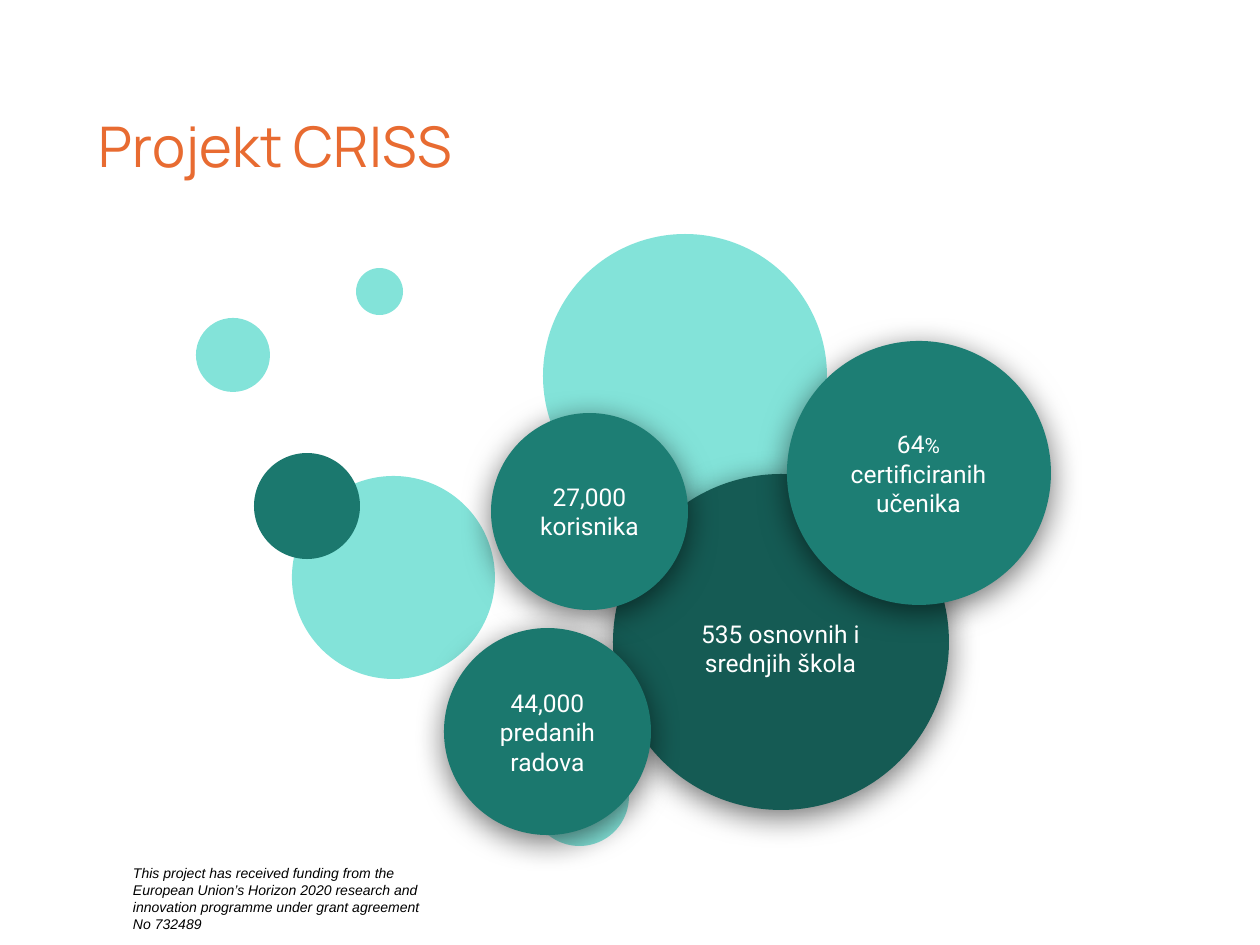
from lxml import etree
from pptx import Presentation
from pptx.dml.color import RGBColor
from pptx.enum.shapes import MSO_SHAPE as Shape
from pptx.enum.text import MSO_ANCHOR as Anchor, PP_ALIGN as Align
from pptx.oxml.ns import qn
from pptx.util import Emu, Pt

PX = 914400 / 126
MINT, TEAL, GREEN, DARK = "83E3D9", "1B786E", "1D7E74", "155B54"
WHITE, BLACK, ORANGE = "FFFFFF", "000000", "E86B31"


def add_circle(left, top, size, color, shadow=False):
    left, top, size = (Emu(round(n * PX)) for n in (left, top, size))
    circle = page.shapes.add_shape(Shape.OVAL, left, top, size, size)
    circle.fill.solid()
    circle.fill.fore_color.rgb = RGBColor.from_string(color)
    circle.line.fill.background()
    circle.shadow.inherit = False
    if shadow:
        effects = circle._element.spPr.find(qn("a:effectLst"))
        outer = etree.SubElement(effects, qn("a:outerShdw"), blurRad=str(Pt(18)),
                                 dist=str(Pt(4)), dir="5400000", algn="ctr", rotWithShape="0")
        tint = etree.SubElement(outer, qn("a:srgbClr"), val=BLACK)
        etree.SubElement(tint, qn("a:alpha"), val="55000")


def add_text(area, runs, font, color, inset=13, anchor=Anchor.MIDDLE, align=Align.LEFT, italic=False):
    box = page.shapes.add_textbox(*(Emu(round(n * PX)) for n in area))
    frame = box.text_frame
    frame.word_wrap = True
    frame.vertical_anchor = anchor
    frame.margin_left = frame.margin_right = Emu(round(13 * PX))
    frame.margin_top = frame.margin_bottom = Emu(round(inset * PX))
    para = frame.paragraphs[0]
    para.alignment = align
    for text, size in runs:
        span = para.add_run()
        span.text = text
        span.font.name = font
        span.font.size = Pt(size)
        span.font.italic = italic
        span.font.color.rgb = RGBColor.from_string(color)


deck = Presentation()
deck.slide_width, deck.slide_height = Emu(round(1260 * PX)), Emu(round(945 * PX))
page = deck.slides.add_slide(deck.slide_layouts[6])

# Funding note and title
add_text((120, 859, 329, 82),
         [("This project has received funding from the European Union’s Horizon 2020 "
           "research and innovation programme under grant agreement No 732489", 8)],
         "Arial", BLACK, inset=6, anchor=Anchor.TOP, italic=True)
add_text((86, 44, 503, 203), [("Projekt CRISS", 32)], "Manrope", ORANGE)

# Decorative circles: left, top, diameter, colour
for decoration in [
    (530, 747, 99, MINT),
    (196, 318, 74, MINT),
    (292, 476, 203, MINT),
    (543, 234, 284, MINT),
    (254, 453, 106, TEAL),
    (356, 268, 47, MINT),
]:
    add_circle(*decoration)

# Figures: circle, text area, runs with sizes
for circle, area, runs in [
    ((613, 474, 336, DARK), (652, 568, 257, 160), [("535 osnovnih i srednjih škola", 14)]),
    ((491, 413, 197, GREEN), (523, 446, 133, 130),
     [("27,000", 14), (" ", 12), ("korisnika", 14)]),
    ((444, 628, 207, TEAL), (474, 667, 147, 130), [("44,000 predanih radova", 14)]),
    ((787, 341, 264, GREEN), (829, 386, 179, 175),
     [("64", 14), ("% ", 12), ("certificiranih", 14), (" ", 12), ("učenika", 14)]),
]:
    add_circle(*circle, shadow=True)
    add_text(area, runs, "Roboto", WHITE, align=Align.CENTER)

deck.save("out.pptx")
